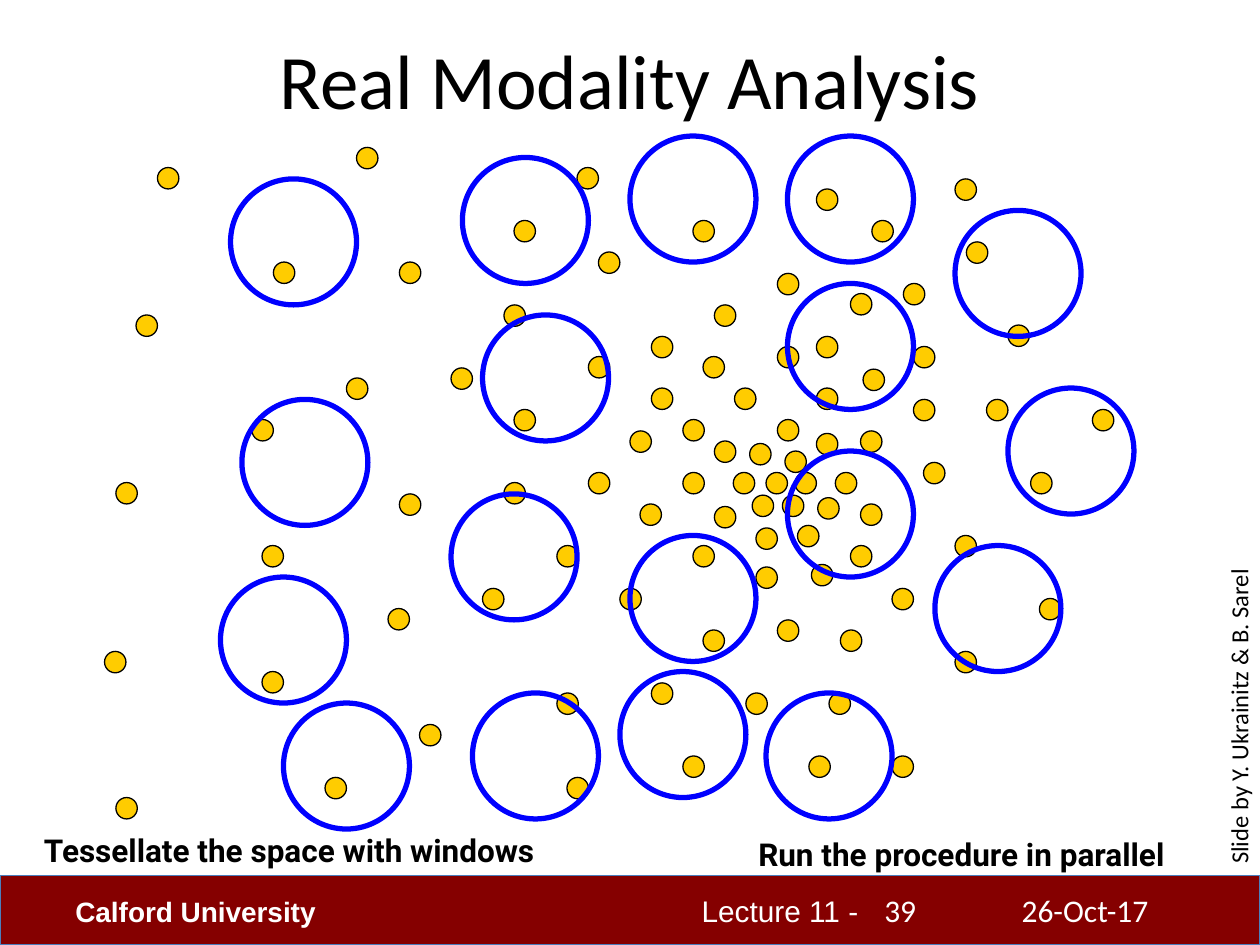
from pptx import Presentation
from pptx.dml.color import RGBColor as Rgb
from pptx.enum.shapes import MSO_SHAPE as Kind
from pptx.enum.text import MSO_ANCHOR as Anchor, PP_ALIGN as Align
from pptx.util import Cm, Pt

HUES = {
    "red": "850000",
    "edge": "4B7EBC",
    "gold": "FFCC00",
    "blue": "0000FF",
    "black": "000000",
    "white": "FFFFFF",
}

DOTS = {
    1.17: [2.83], 1.33: [1.25, 4.58], 1.42: [7.58], 1.5: [6.48],
    1.75: [4.08, 5.5, 6.92], 1.92: [7.67], 2: [4.75], 2.08: [2.17, 3.17],
    2.17: [6.17], 2.25: [7.17], 2.33: [6.75], 2.42: [4, 5.67],
    2.5: [1.08], 2.58: [8], 2.67: [5.17, 6.48], 2.75: [6.17, 7.25],
    2.83: [4.67, 5.58], 2.92: [3.58], 2.93: [6.85], 3: [2.75],
    3.08: [5.17, 5.83, 6.48], 3.17: [7.25, 7.83], 3.25: [4.08, 8.67],
    3.33: [2, 5.42, 6.17], 3.42: [5, 6.83], 3.44: [6.48], 3.5: [5.67],
    3.52: [5.95], 3.58: [6.23], 3.67: [7.33],
    3.75: [4.67, 5.42, 5.82, 6.08, 6.31, 6.63, 8.18],
    3.83: [0.92, 4], 3.92: [3.17], 3.93: [5.97, 6.21], 3.95: [6.49],
    4: [5.08, 6.83], 4.02: [5.67], 4.17: [6.33], 4.19: [6], 4.25: [7.58],
    4.33: [2.08, 4.42, 5.5, 6.75], 4.48: [6.44], 4.5: [6],
    4.67: [3.83, 4.92, 7.08], 4.75: [8.25], 4.83: [3.08], 4.92: [6.17],
    5: [5.58, 6.67], 5.17: [0.83, 7.58], 5.33: [2.08], 5.42: [5.17],
    5.5: [4.42, 5.92, 6.58], 5.75: [3.33], 6: [5.42, 6.42, 7.08],
    6.17: [2.58, 4.5], 6.33: [0.92],
}

RINGS = {
    1.08: [5, 6.25], 1.25: [3.67], 1.42: [1.83], 1.67: [7.58],
    2.25: [6.25], 2.5: [3.83], 3.08: [8], 3.17: [1.92], 3.58: [6.25],
    3.92: [3.58], 4.25: [5], 4.33: [7.42], 4.58: [1.75],
    5.33: [4.92], 5.5: [3.75, 6.08], 5.58: [2.25],
}


def inch(size):
    return Cm(size * 2.54)


class Deck:
    def __init__(self, wide, high):
        self.prs = Presentation()
        self.prs.slide_width = inch(wide)
        self.prs.slide_height = inch(high)
        self.slide = self.prs.slides.add_slide(self.prs.slide_layouts[6])

    def shape(self, kind, box, fill, line, width):
        item = self.slide.shapes.add_shape(kind, *map(inch, box))
        item.shadow.inherit = False
        if fill:
            item.fill.solid()
            item.fill.fore_color.rgb = Rgb.from_string(HUES[fill])
        else:
            item.fill.background()
        item.line.color.rgb = Rgb.from_string(HUES[line])
        item.line.width = Pt(width)

    def discs(self, rows, size, fill, line, width):
        for top, lefts in rows.items():
            for left in lefts:
                self.shape(Kind.OVAL, (left, top, size, size), fill, line, width)

    def text(self, words, box, size, face="Calibri", hue="black", bold=False,
             wrap=True, align=Align.LEFT, anchor=Anchor.TOP, turn=0):
        item = self.slide.shapes.add_textbox(*map(inch, box))
        item.rotation = turn
        frame = item.text_frame
        frame.word_wrap = wrap
        frame.vertical_anchor = anchor
        para = frame.paragraphs[0]
        para.text = words
        para.alignment = align
        font = para.font
        font.name, font.size, font.bold = face, Pt(size), bold
        font.color.rgb = Rgb.from_string(HUES[hue])

    def save(self):
        self.prs.save("out.pptx")


def main():
    deck = Deck(10, 7.5)
    deck.shape(Kind.RECTANGLE, (0, 6.95, 10, 0.55), "red", "edge", 0.75)
    deck.text("Lecture 11 -", (5.47, 7.04, 2.44, 0.4), 17, "Arial", "white")
    deck.text("Calford University", (0.5, 7.05, 2.33, 0.37), 16, "Arial", "white", True)
    deck.discs(DOTS, 0.17, "gold", "black", 0.75)
    deck.discs(RINGS, 1, None, "blue", 3)
    deck.text("Tessellate the space with windows", (0.25, 6.55, 4.58, 0.4),
              18, "Roboto", bold=True)
    deck.text("Run the procedure in parallel", (5.92, 6.58, 3.66, 0.4),
              18, "Roboto", bold=True, wrap=False)
    deck.text("Slide by Y. Ukrainitz & B. Sarel", (8.33, 5.28, 3.01, 0.34),
              14, wrap=False, turn=270)
    deck.text("Real Modality Analysis", (0.5, 0, 9, 1.25), 44,
              align=Align.CENTER, anchor=Anchor.MIDDLE)
    deck.text("26-Oct-17", (8.01, 7.02, 1.74, 0.4), 18, hue="white")
    deck.text("39", (6.92, 7.02, 1.1, 0.4), 18, hue="white")
    deck.save()


if __name__ == "__main__":
    main()
